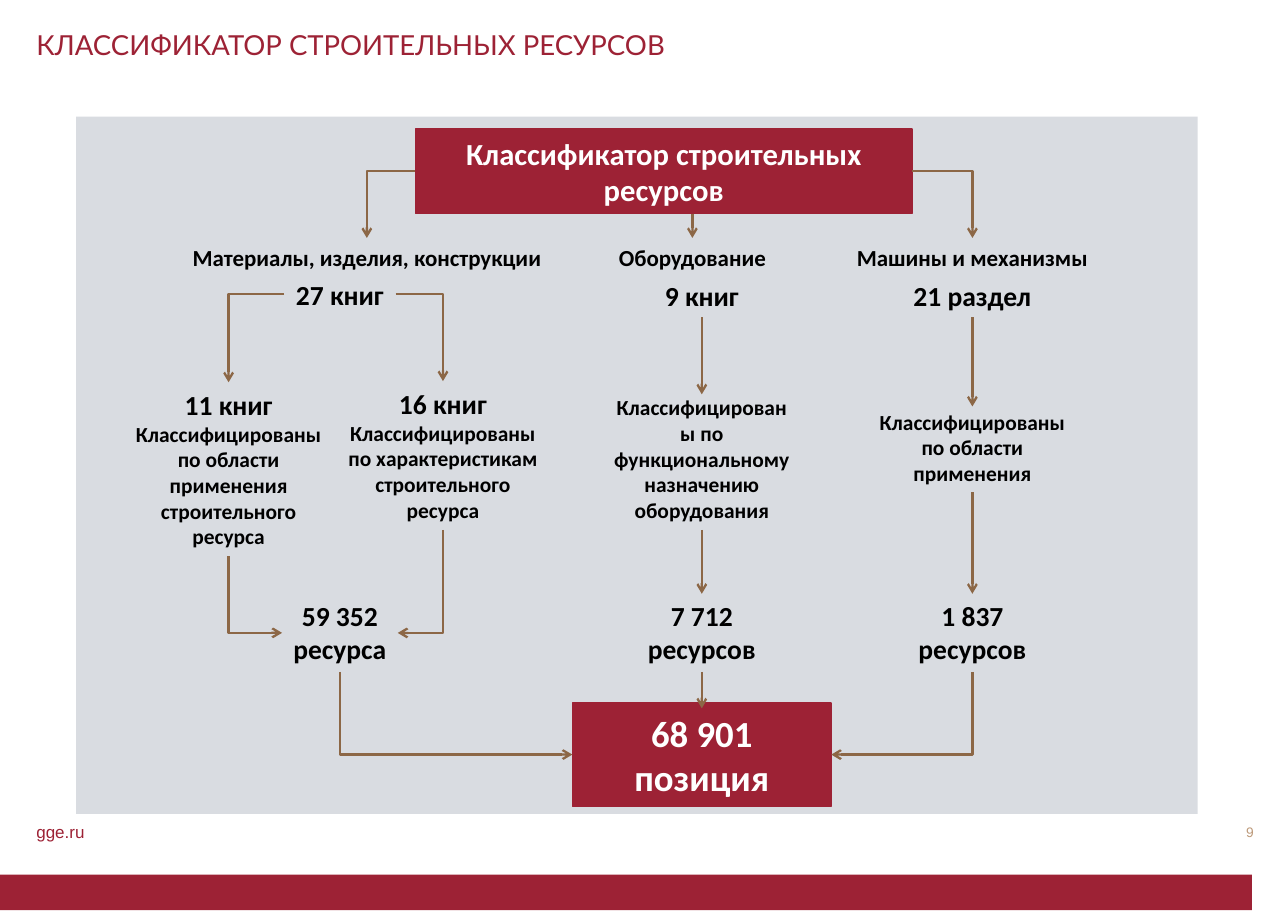
from dataclasses import dataclass

from lxml import etree
from pptx import Presentation, util as u
from pptx.dml.color import RGBColor
from pptx.enum import shapes, text
from pptx.oxml.ns import qn

WIDTH, HEIGHT = u.Inches(11.69), u.Inches(8.27)
TOP, LEFT, BOTTOM, RIGHT = range(4)


@dataclass(frozen=True)
class Theme:
    crimson: str = "9D2235"
    slate: str = "44546A"
    bronze: str = "8C6746"
    sand: str = "BD9A7A"
    white: str = "FFFFFF"
    black: str = "000000"
    body_font: str = "Calibri"
    heading_font: str = "Lato"
    footer_font: str = "Arial"
    total: float = 24
    root: float = 20
    heading: float = 18
    count: float = 18
    branch: float = 15
    detail: float = 14
    site: float = 11.1
    page: float = 9


THEME = Theme()


@dataclass(frozen=True)
class Node:
    """A text on the chart; lengths are percent of the slide's width and height."""
    centre: float
    top: float
    width: float
    height: float
    words: str
    size: float
    lead: str = ""
    wrap: bool = False
    filled: bool = False

    def point(self, side: int) -> tuple[float, float]:
        across = {LEFT: -0.5, RIGHT: 0.5}.get(side, 0)
        down = {TOP: 0, BOTTOM: 1}.get(side, 0.5)
        return self.centre + across * self.width, self.top + down * self.height


@dataclass(frozen=True)
class Link:
    start: str
    start_side: int
    end: str
    end_side: int
    overlap: float = 0


@dataclass(frozen=True)
class Caption:
    left: float
    top: float
    width: float
    height: float
    words: str
    font: str
    size: float
    colour: str
    align: text.PP_ALIGN = text.PP_ALIGN.LEFT
    anchor: text.MSO_ANCHOR = text.MSO_ANCHOR.TOP
    line: float | None = None


GROUPS, EQUIPMENT, MACHINES = 26.39, 54.49, 75.5
BY_AREA, BY_TRAIT = 17.75, 34.39
BRANCH_ROW, COUNT_ROW, RESOURCE_ROW = 26.12, 30, 65.18
BRANCH_H, COUNT_H, RESOURCE_H = 4.23, 4.84, 8.59

NODES = {
    "root": Node(51.54, 14.15, 38.58, 9.31, "Классификатор строительных ресурсов",
                 THEME.root, wrap=True, filled=True),
    "materials": Node(28.49, BRANCH_ROW, 29.08, BRANCH_H,
                      "Материалы, изделия, конструкции", THEME.branch),
    "equipment": Node(53.76, BRANCH_ROW, 13.26, BRANCH_H, "Оборудование", THEME.branch),
    "machines": Node(MACHINES, BRANCH_ROW, 19.85, BRANCH_H, "Машины и механизмы", THEME.branch),
    "27 books": Node(GROUPS, 29.87, 8.64, COUNT_H, "27 книг", THEME.count),
    "9 books": Node(EQUIPMENT, COUNT_ROW, 7.53, COUNT_H, "9 книг", THEME.count),
    "21 sections": Node(MACHINES, COUNT_ROW, 10.95, COUNT_H, "21 раздел", THEME.count),
    "by area": Node(BY_AREA, 41.96, 16.34, 19.11,
                    "Классифицированы по области применения строительного ресурса",
                    THEME.detail, "11 книг ", wrap=True),
    "by trait": Node(BY_TRAIT, 41.84, 16.42, 16.32,
                     "Классифицированы по характеристикам строительного ресурса",
                     THEME.detail, "16 книг ", wrap=True),
    "by function": Node(EQUIPMENT, 42.68, 15.57, 15.48,
                        "Классифицированы по функциональному назначению оборудования",
                        THEME.detail, wrap=True),
    "by use": Node(MACHINES, 44.26, 18.14, 9.79, "Классифицированы по области применения",
                   THEME.detail, wrap=True),
    "materials sum": Node(GROUPS, RESOURCE_ROW, 8.98, RESOURCE_H, "59 352\nресурса", THEME.count),
    "equipment sum": Node(EQUIPMENT, RESOURCE_ROW, 10.18, RESOURCE_H, "7 712\nресурсов", THEME.count),
    "machines sum": Node(MACHINES, RESOURCE_ROW, 10.18, RESOURCE_H, "1 837\nресурсов", THEME.count),
    "total": Node(EQUIPMENT, 77.15, 20.1, 11.37, "68 901 позиция", THEME.total,
                  wrap=True, filled=True),
}

LINKS = [
    Link("root", LEFT, "materials", TOP),
    Link("root", RIGHT, "machines", TOP),
    Link("root", BOTTOM, "equipment", TOP),
    Link("27 books", LEFT, "by area", TOP),
    Link("27 books", RIGHT, "by trait", TOP),
    Link("by area", BOTTOM, "materials sum", LEFT),
    Link("by trait", BOTTOM, "materials sum", RIGHT),
    Link("9 books", BOTTOM, "by function", TOP, overlap=0.6),
    Link("by function", BOTTOM, "equipment sum", TOP),
    Link("equipment sum", BOTTOM, "total", TOP, overlap=0.6),
    Link("21 sections", BOTTOM, "by use", TOP, overlap=0.36),
    Link("by use", BOTTOM, "machines sum", TOP),
    Link("materials sum", BOTTOM, "total", LEFT),
    Link("machines sum", BOTTOM, "total", RIGHT),
]

CAPTIONS = [
    Caption(2.82, 3.39, 88.71, 6.53, "КЛАССИФИКАТОР СТРОИТЕЛЬНЫХ РЕСУРСОВ",
            THEME.heading_font, THEME.heading, THEME.crimson, line=20),
    Caption(2.82, 90.08, 9.07, 2.54, "gge.ru", THEME.footer_font, THEME.site,
            THEME.crimson, anchor=text.MSO_ANCHOR.MIDDLE),
    Caption(95.3, 90.45, 2.05, 3.75, "9", THEME.footer_font, THEME.page, THEME.sand,
            text.PP_ALIGN.RIGHT, line=10.8),
]


def across(share: float) -> int:
    return round(WIDTH * share / 100)


def down(share: float) -> int:
    return round(HEIGHT * share / 100)


def frame(left: float, top: float, width: float, height: float) -> tuple[int, int, int, int]:
    return across(left), down(top), across(width), down(height)


def style(run, font: str, size: float, colour: str, bold: bool = False) -> None:
    run.font.name, run.font.size, run.font.bold = font, u.Pt(size), bold
    run.font.color.rgb = RGBColor.from_string(colour)


def add_band(slide, box: tuple[int, int, int, int], colour: str):
    band = slide.shapes.add_shape(shapes.MSO_SHAPE.RECTANGLE, *box)
    band.shadow.inherit = False
    band.fill.solid()
    band.fill.fore_color.rgb = RGBColor.from_string(colour)
    band.line.fill.background()
    return band


def add_caption(slide, caption: Caption) -> None:
    box = slide.shapes.add_textbox(*frame(caption.left, caption.top, caption.width, caption.height))
    body = box.text_frame
    body.margin_left = body.margin_right = body.margin_top = body.margin_bottom = 0
    body.word_wrap, body.vertical_anchor = True, caption.anchor
    body.text = caption.words
    paragraph = body.paragraphs[0]
    paragraph.alignment = caption.align
    if caption.line:
        paragraph.line_spacing = u.Pt(caption.line)
    style(paragraph.runs[0], caption.font, caption.size, caption.colour)


def add_node(slide, node: Node):
    box = frame(node.centre - node.width / 2, node.top, node.width, node.height)
    if node.filled:
        drawn = add_band(slide, box, THEME.crimson)
        drawn.line.color.rgb = RGBColor.from_string(THEME.crimson)
        drawn.line.width = u.Pt(1)
    else:
        drawn = slide.shapes.add_textbox(*box)
    body = drawn.text_frame
    body.word_wrap, body.auto_size = node.wrap, text.MSO_AUTO_SIZE.SHAPE_TO_FIT_TEXT
    body.text = node.lead or node.words
    if node.lead:
        body.paragraphs[0].add_run().text = node.words
    for paragraph in body.paragraphs:
        paragraph.alignment = text.PP_ALIGN.CENTER
        for run in paragraph.runs:
            size = THEME.count if run.text == node.lead else node.size
            style(run, THEME.body_font, size, THEME.white if node.filled else THEME.black, True)
    return drawn


def add_link(slide, link: Link, drawn: dict) -> None:
    """Draw a straight arrow, or one with a single right-angled bend."""
    start, end = NODES[link.start], NODES[link.end]
    (x1, y1), (x2, y2) = start.point(link.start_side), end.point(link.end_side)
    straight = link.start_side == BOTTOM and link.end_side == TOP
    if straight:
        x1 = x2
    x1, x2, y1, y2 = across(x1), across(x2), down(y1), down(y2 + link.overlap)
    kind = shapes.MSO_CONNECTOR.STRAIGHT if straight else shapes.MSO_CONNECTOR.ELBOW
    turned = not straight and link.start_side == BOTTOM
    rightward = x2 > x1
    if turned:
        mid_x, mid_y = (x1 + x2) // 2, (y1 + y2) // 2
        half_w, half_h = (y2 - y1) // 2, abs(x2 - x1) // 2
        x1, x2 = mid_x - half_w, mid_x + half_w
        y1, y2 = mid_y - half_h, mid_y + half_h
        if rightward:
            x1, x2 = x2, x1
    arrow = slide.shapes.add_connector(kind, x1, y1, x2, y2)
    properties = arrow._element.spPr
    if not straight:
        properties.find(qn("a:prstGeom")).set("prst", "bentConnector2")
    if turned:
        properties.find(qn("a:xfrm")).set("rot", str((270 if rightward else 90) * 60000))
    if straight and start.centre == end.centre:
        arrow.begin_connect(drawn[link.start], link.start_side)
    if straight and not link.overlap:
        arrow.end_connect(drawn[link.end], link.end_side)
    arrow.line.color.rgb = RGBColor.from_string(THEME.bronze)
    arrow.line.width = u.Pt(1.5)
    etree.SubElement(properties.find(qn("a:ln")), qn("a:tailEnd"), type="arrow")
    etree.SubElement(properties, qn("a:effectLst"))


def main() -> None:
    deck = Presentation()
    deck.slide_width, deck.slide_height = WIDTH, HEIGHT
    slide = deck.slides.add_slide(deck.slide_layouts[6])
    add_band(slide, frame(0, 96, 97.2, 3.9), THEME.crimson)
    panel = add_band(slide, frame(5.92, 12.82, 87.08, 76.54), THEME.slate)
    tint = panel._element.spPr.find(qn("a:solidFill"))[0]
    etree.SubElement(tint, qn("a:alpha"), val="20000")
    for caption in CAPTIONS:
        add_caption(slide, caption)
    drawn = {key: add_node(slide, node) for key, node in NODES.items()}
    for link in LINKS:
        add_link(slide, link, drawn)
    deck.save("out.pptx")


if __name__ == "__main__":
    main()
